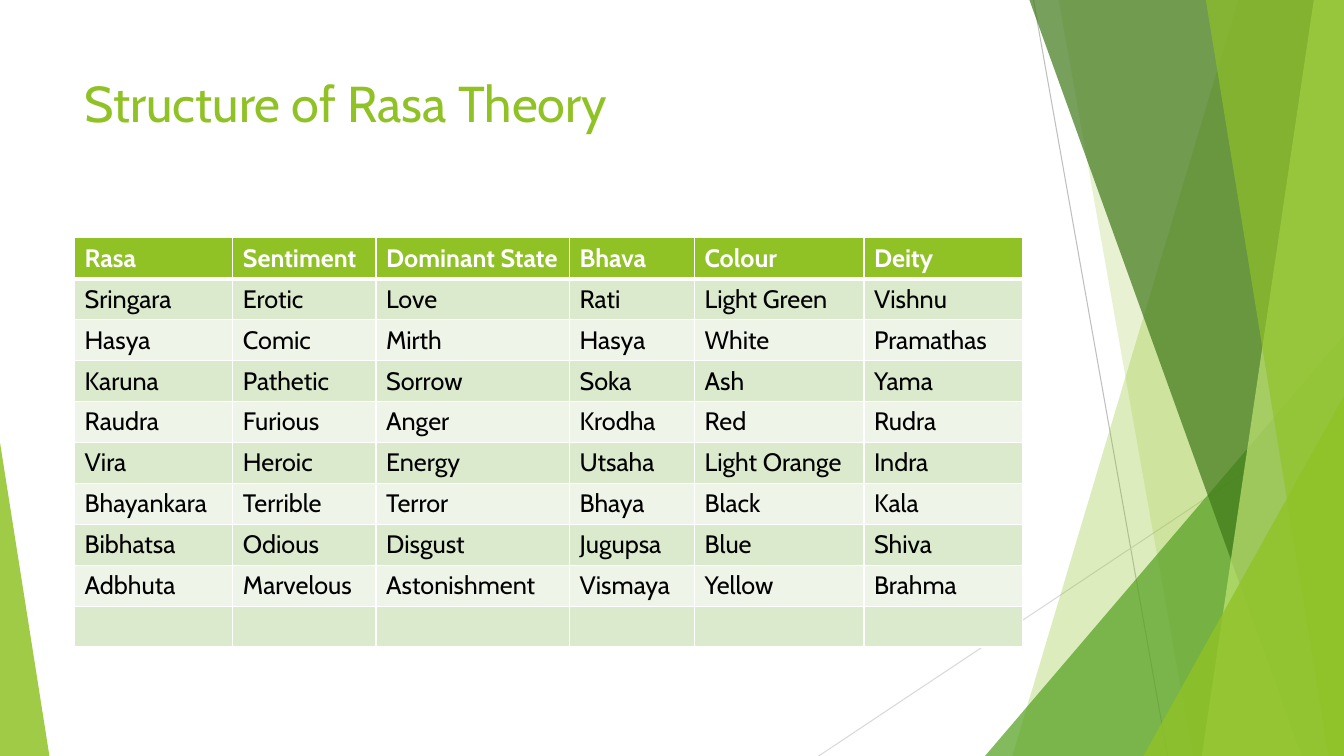
from lxml import etree
from pptx import Presentation
from pptx import util as u
from pptx.dml.color import RGBColor
from pptx.enum import shapes, text
from pptx.oxml.ns import qn

LIME = RGBColor(0x90, 0xC2, 0x26)
LEAF = RGBColor(0x54, 0xA0, 0x21)
MOSS = RGBColor(0x3F, 0x78, 0x19)
PALE = RGBColor(0xC0, 0xE4, 0x74)
GREY = RGBColor(0xBF, 0xBF, 0xBF)
MIST = RGBColor(0xD9, 0xD9, 0xD9)
ODD = RGBColor(0xDB, 0xE9, 0xCD)
EVEN = RGBColor(0xEE, 0xF4, 0xE8)
WHITE = RGBColor(0xFF, 0xFF, 0xFF)
BLACK = RGBColor(0, 0, 0)
FONT = "Cabin"
WIDE, HIGH = 13.33, 7.5

COLS = [1.57, 1.42, 1.92, 1.24, 1.68, 1.57]
ROWS = [
    ["Rasa", "Sentiment", "Dominant State", "Bhava", "Colour", "Deity"],
    ["Sringara", "Erotic", "Love", "Rati", "Light Green", "Vishnu"],
    ["Hasya", "Comic", "Mirth", "Hasya", "White", "Pramathas"],
    ["Karuna", "Pathetic", "Sorrow", "Soka", "Ash", "Yama"],
    ["Raudra", "Furious", "Anger", "Krodha", "Red", "Rudra"],
    ["Vira", "Heroic", "Energy", "Utsaha", "Light Orange", "Indra"],
    ["Bhayankara", "Terrible", "Terror", "Bhaya", "Black", "Kala"],
    ["Bibhatsa", "Odious", "Disgust", "Jugupsa", "Blue", "Shiva"],
    ["Adbhuta", "Marvelous", "Astonishment", "Vismaya", "Yellow", "Brahma"],
    [""] * 6,
]


def inches(*vals):
    return [u.Inches(v) for v in vals]


def tint(shape, color, alpha):
    """Give a shape a see-through fill (alpha in percent) and no line."""
    shape.shadow.inherit = False
    shape.line.fill.background()
    shape.fill.solid()
    shape.fill.fore_color.rgb = color
    clr = shape.fill._xPr.find(qn("a:solidFill"))[0]
    etree.SubElement(clr, qn("a:alpha"), val=str(alpha * 1000))


def add_line(slide, ends, color):
    line = slide.shapes.add_connector(
        shapes.MSO_CONNECTOR.STRAIGHT, *inches(*ends))
    line.line.color.rgb = color
    line.line.width = u.Pt(0.75)
    etree.SubElement(line._element.spPr, qn("a:effectLst"))


def add_band(slide, box, top, foot, color, alpha):
    """Fill the box to the right of a slanted edge from top to foot."""
    left, y, width, height = box
    right, base = left + width, y + height
    pen = slide.shapes.build_freeform(*inches(left + top, y), scale=1.0)
    pen.add_line_segments(
        [inches(*p) for p in [(right, y), (right, base), (left + foot, base)]])
    tint(pen.convert_to_shape(), color, alpha)


def add_wedge(slide, box, tip, color, alpha):
    wedge = slide.shapes.add_shape(
        shapes.MSO_SHAPE.ISOSCELES_TRIANGLE, *inches(*box))
    wedge.adjustments[0] = tip
    tint(wedge, color, alpha)


def add_facets(slide, box):
    """Draw the green facets against the right side of the box."""
    left, top, width, height = box
    right, base = left + width, top + height

    def band(wide, start, foot, color, alpha):
        area = (right - wide, top, wide, height)
        add_band(slide, area, start, foot, color, alpha)

    def wedge(wide, high, color, alpha):
        area = (right - wide, base - high, wide, high)
        add_wedge(slide, area, 1, color, alpha)

    add_line(slide, (right - 3.08, top, right - 1.75, base), GREY)
    add_line(slide, (right, top + 4.03, right - 5.21, base), MIST)
    band(3.29, 2.24, 0, LIME, 30)
    band(2.83, 0, 1.33, LIME, 20)
    wedge(3.56, 4.17, LEAF, 72)
    band(3.12, 0, 2.7, MOSS, 70)
    band(1.41, 1.11, 0, PALE, 70)
    band(1.37, 0, 1.22, LIME, 65)
    wedge(1.99, 3.57, LIME, 80)
    add_wedge(slide, (left, base - 3.11, 0.49, 3.11), 0, LIME, 85)


def add_title(slide, box):
    title = slide.shapes.title
    slide.shapes._spTree.append(title._element)
    title.left, title.top, title.width, title.height = inches(*box)
    frame = title.text_frame
    frame.text = "Structure of Rasa Theory"
    frame.word_wrap = True
    frame.vertical_anchor = text.MSO_ANCHOR.TOP
    para = frame.paragraphs[0]
    para.alignment = text.PP_ALIGN.LEFT
    style(para, 36, LIME)


def style(para, size, color, bold=False):
    for font in [para.font] + [run.font for run in para.runs]:
        font.name = FONT
        font.size = u.Pt(size)
        font.bold = bold
        font.color.rgb = color


def edge(cell, side, width):
    line = etree.SubElement(cell._tc.get_or_add_tcPr(), qn("a:ln" + side),
                            w=str(u.Pt(width)))
    fill = etree.SubElement(line, qn("a:solidFill"))
    etree.SubElement(fill, qn("a:srgbClr"), val=str(WHITE))


def add_grid(slide, box):
    grid = slide.shapes.add_table(len(ROWS), len(COLS), *inches(*box)).table
    for col, width in zip(grid.columns, COLS):
        col.width = u.Inches(width)
    for r, row in enumerate(ROWS):
        head = r == 0
        for c, word in enumerate(row):
            cell = grid.cell(r, c)
            for side in "LRTB":
                thick = (r, side) in [(0, "B"), (1, "T")]
                edge(cell, side, 3 if thick else 1)
            cell.fill.solid()
            cell.fill.fore_color.rgb = LIME if head else ODD if r % 2 else EVEN
            cell.text_frame.text = word
            style(cell.text_frame.paragraphs[0], 18,
                  WHITE if head else BLACK, head)


def main():
    deck = Presentation()
    deck.slide_width, deck.slide_height = inches(WIDE, HIGH)
    slide = deck.slides.add_slide(deck.slide_layouts[5])
    add_facets(slide, (0, 0, WIDE, HIGH))
    add_title(slide, (0.74, 0.67, 9.4, 1.44))
    add_grid(slide, (0.74, 2.36, 9.4, 4.06))
    deck.save("out.pptx")


if __name__ == "__main__":
    main()
